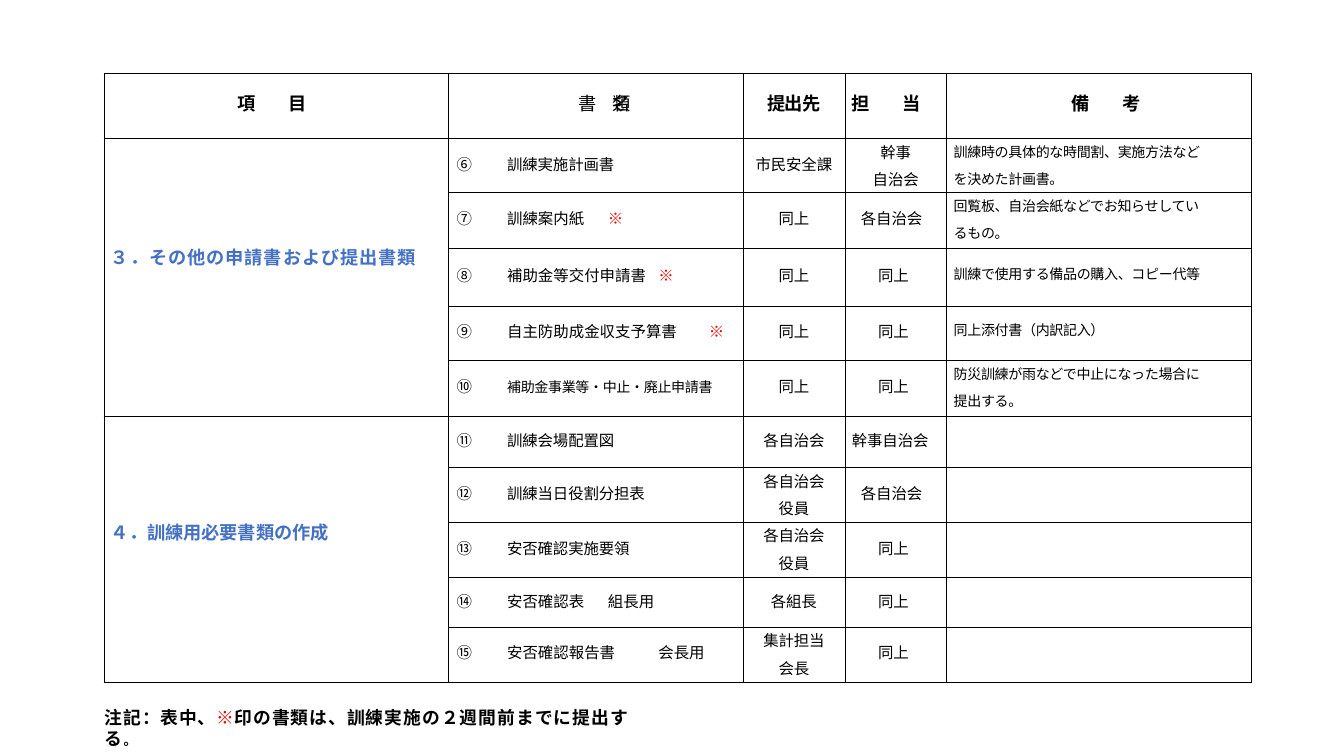
from dataclasses import dataclass

from lxml import etree
from pptx import Presentation
from pptx.dml.color import RGBColor
from pptx.enum.text import MSO_AUTO_SIZE, PP_ALIGN
from pptx.oxml.ns import qn
from pptx.util import Pt

LEFT = PP_ALIGN.LEFT
CENTER = PP_ALIGN.CENTER
GROW = MSO_AUTO_SIZE.SHAPE_TO_FIT_TEXT
PX = 9144


@dataclass(frozen=True)
class Theme:
    """Colours, font and type sizes of the slide."""
    font: str = "Noto Sans CJK JP"
    ink: str = "000000"
    accent: str = "4471C4"
    alert: str = "ED0000"
    heading: float = 13
    note: float = 12.7
    body: float = 11
    small: float = 10
    stop: float = 9.5
    border: float = 0.5


@dataclass
class Run:
    """A stretch of text in one style."""
    text: str
    size: float
    spacing: float = 0
    color: str = Theme.ink
    bold: bool = False


class SlideBuilder:
    """Draws styled elements on the current slide."""

    def __init__(self, slide, theme):
        self.slide = slide
        self.theme = theme

    def fill_text(self, frame, lines, indent=0, tabs=(), align=LEFT, gap=0):
        """Write each line, a list of runs, as a paragraph."""
        for number, runs in enumerate(lines):
            paragraph = frame.add_paragraph() if number else frame.paragraphs[0]
            properties = paragraph._p.get_or_add_pPr()
            properties.set("marL", str(indent * PX))
            properties.set("indent", "0")
            if tabs:
                tab_list = etree.SubElement(properties, qn("a:tabLst"))
                for position in tabs:
                    etree.SubElement(tab_list, qn("a:tab"), pos=str(position * PX), algn="l")
            paragraph.alignment = align
            paragraph.space_before = Pt(gap if number else 0)
            for run in runs:
                self.add_run(paragraph, run)

    def add_run(self, paragraph, style):
        """Add one run to a paragraph."""
        run = paragraph.add_run()
        run.text = style.text
        run.font.size = Pt(style.size)
        run.font.bold = style.bold
        run.font.color.rgb = RGBColor.from_string(style.color)
        run.font.name = self.theme.font
        properties = run._r.get_or_add_rPr()
        properties.set("spc", str(round(style.spacing * 100)))
        etree.SubElement(properties, qn("a:ea"), typeface=self.theme.font)

    def add_table(self, left, top, widths, heights):
        """Add a plain bordered table."""
        table = self.slide.shapes.add_table(
            len(heights), len(widths), left * PX, top * PX,
            sum(widths) * PX, sum(heights) * PX).table
        table.first_row = False
        table.horz_banding = False
        for column, width in zip(table.columns, widths):
            column.width = width * PX
        for row, height in zip(table.rows, heights):
            row.height = height * PX
        for cell in table.iter_cells():
            self.style_cell(cell)
        return table

    def style_cell(self, cell):
        """Give a cell thin borders and no fill."""
        properties = cell._tc.get_or_add_tcPr()
        for side in ("lnL", "lnR", "lnT", "lnB"):
            line = etree.SubElement(properties, qn(f"a:{side}"), w=str(Pt(self.theme.border)))
            fill = etree.SubElement(line, qn("a:solidFill"))
            etree.SubElement(fill, qn("a:srgbClr"), val=self.theme.ink)
        cell.fill.background()

    def write_cell(self, cell, lines, top, **layout):
        """Write text in a cell below a top margin."""
        cell.margin_left = cell.margin_right = cell.margin_bottom = 0
        cell.margin_top = top * PX
        self.fill_text(cell.text_frame, lines, **layout)

    def add_text(self, left, top, width, height, lines, **layout):
        """Add a wrapping text box."""
        box = self.slide.shapes.add_textbox(left * PX, top * PX, width * PX, height * PX)
        frame = box.text_frame
        frame.word_wrap = True
        frame.auto_size = GROW
        frame.margin_left = frame.margin_right = frame.margin_bottom = 0
        frame.margin_top = PX
        self.fill_text(frame, lines, **layout)


WIDTHS = [342, 292, 101, 101, 302]
HEIGHTS = [64, 54, 55, 58, 54, 55, 51, 54, 55, 49, 55]
HEADERS = [
    ("項\t目", 133, [250], LEFT, True),
    ("書\t類\t名", 129, [168, 206], LEFT, False),
    ("提出先", 0, [], CENTER, True),
    ("担\t当", 7, [47], LEFT, True),
    ("備\t考", 124, [221], LEFT, True),
]
SECTIONS = [
    (1, 5, "３．その他の申請書および提出書類", 0.7, 105),
    (6, 10, "４．訓練用必要書類の作成", 0, 101),
]
DOCUMENTS = [
    (14, "⑥", "訓練実施計画書", "", 0, "市民安全課", "幹事\n自治会",
     "訓練時の具体的な時間割、実施方法など\nを決めた計画書。"),
    (14, "⑦", "訓練案内紙", "※", 141, "同上", "各自治会",
     "回覧板、自治会紙などでお知らせしてい\nるもの。"),
    (15, "⑧", "補助金等交付申請書", "※", 208, "同上", "同上",
     "訓練で使用する備品の購入、コピー代等"),
    (13, "⑨", "自主防助成金収支予算書", "※", 241, "同上", "同上", "同上添付書（内訳記入）"),
    (14, "⑩", "補助金事業等・中止・廃止申請書", "", 0, "同上", "同上",
     "防災訓練が雨などで中止になった場合に\n提出する。"),
    (12, "⑪", "訓練会場配置図", "", 0, "各自治会", "幹事自治会", ""),
    (14, "⑫", "訓練当日役割分担表", "", 0, "各自治会\n役員", "各自治会", ""),
    (14, "⑬", "安否確認実施要領", "", 0, "各自治会\n役員", "同上", ""),
    (12, "⑭", "安否確認表", "組長用", 141, "各組長", "同上", ""),
    (14, "⑮", "安否確認報告書", "会長用", 174, "集計担当\n会長", "同上", ""),
]


def write_document(builder, table, row, document):
    """Fill the four document cells of one row."""
    theme = builder.theme
    top, number, name, extra, extra_tab, receiver, owner, remark = document
    long_name = len(name) > 12
    runs = [Run(number + "\t", theme.body, -0.5),
            Run(name, theme.small if long_name else theme.body,
                -0.2 if long_name else 0 if extra else -0.1)]
    tabs = [41]
    if extra:
        marked = extra == "※"
        tabs.append(extra_tab)
        runs += [Run("\t", theme.body),
                 Run(extra, theme.body, 0, theme.alert if marked else theme.ink, marked)]
    builder.write_cell(table.cell(row, 1), [runs], top, indent=8, tabs=tabs)

    for column, text in ((2, receiver), (3, owner)):
        lines = [[Run(line, theme.body, -0.1)] for line in text.split("\n")]
        centred = column == 2 or len(lines) > 1
        builder.write_cell(table.cell(row, column), lines, 2 if len(lines) > 1 else top,
                           indent=0 if centred else (100 - 17 * len(text)) // 2,
                           align=CENTER if centred else LEFT, gap=3.6)
    if remark:
        lines = [[Run(line, theme.small, -0.2)] for line in remark.split("\n")]
        builder.write_cell(table.cell(row, 4), lines, 3 if len(lines) > 1 else top,
                           indent=7, gap=4.8)


def main():
    """Build and save the slide."""
    presentation = Presentation()
    presentation.slide_width = 1333 * PX
    presentation.slide_height = 750 * PX
    theme = Theme()
    builder = SlideBuilder(presentation.slides.add_slide(presentation.slide_layouts[6]), theme)

    table = builder.add_table(103, 73, WIDTHS, HEIGHTS)
    for column, (text, indent, tabs, align, bold) in enumerate(HEADERS):
        builder.write_cell(table.cell(0, column), [[Run(text, theme.heading, -0.5, bold=bold)]],
                           16, indent=indent, tabs=tabs, align=align)
    for first, last, text, spacing, top in SECTIONS:
        table.cell(first, 0).merge(table.cell(last, 0))
        title = Run(text, theme.heading, spacing, theme.accent, True)
        builder.write_cell(table.cell(first, 0), [[title]], top, indent=7)
    for row, document in enumerate(DOCUMENTS, start=1):
        write_document(builder, table, row, document)

    builder.add_text(103, 700, 527, 23, [[
        Run("注記：表中、", theme.note, 0.6, bold=True),
        Run("※", theme.note, -0.1, theme.alert, True),
        Run("印の書類は、訓練実施の２週間前までに提出する", theme.note, 0.7, bold=True),
        Run("。", theme.stop, 2.7, bold=True),
    ]], indent=1)
    presentation.save("out.pptx")


if __name__ == "__main__":
    main()
